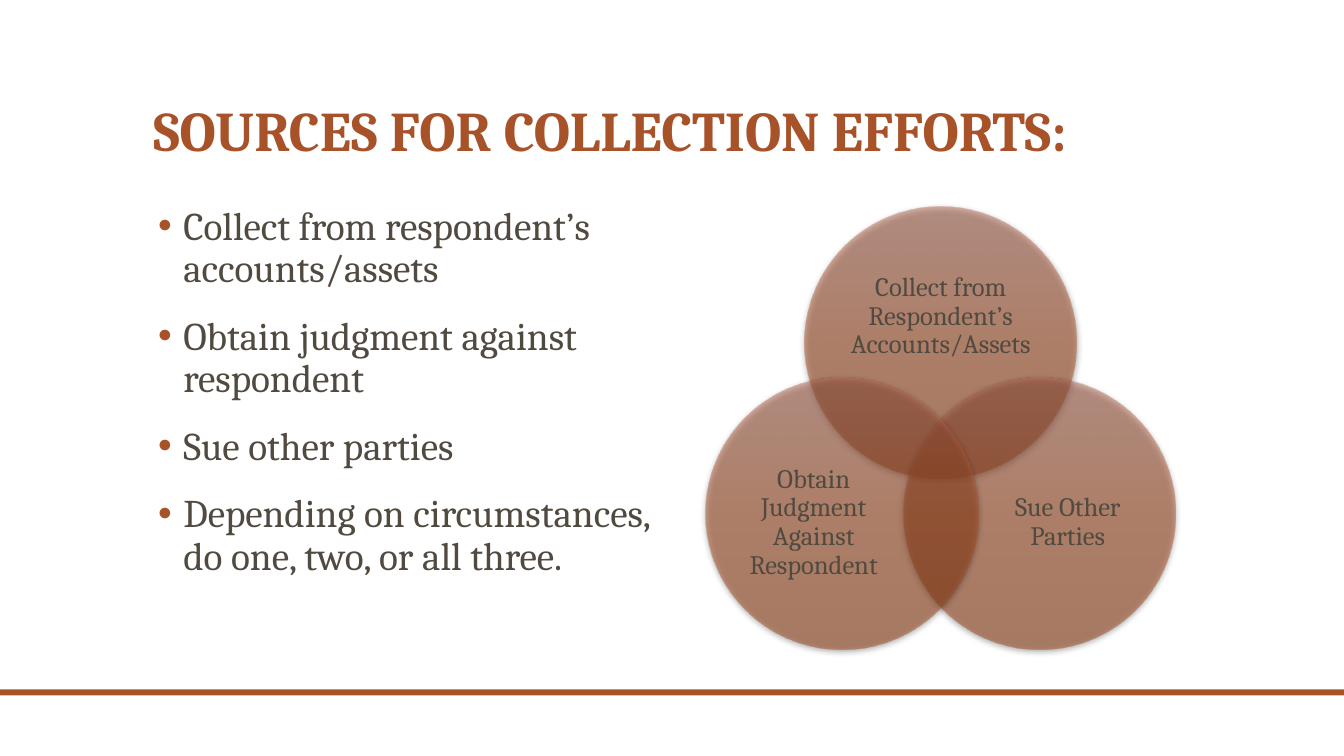
from dataclasses import dataclass
from math import cos, radians, sin

from lxml import etree
from pptx import Presentation
from pptx.dml.color import RGBColor
from pptx.enum.shapes import MSO_SHAPE
from pptx.enum.text import MSO_ANCHOR, MSO_AUTO_SIZE, PP_ALIGN
from pptx.oxml import parse_xml
from pptx.oxml.ns import nsdecls, qn
from pptx.util import Inches, Pt


@dataclass(frozen=True)
class Theme:
    font: str = "Cambria"
    accent: str = "A85229"
    text: str = "514A40"
    gradient: tuple = ((0, "B46952"), (50, "AE5023"), (100, "A14519"))
    title_size: int = 40
    body_size: int = 28
    label_size: int = 19


theme = Theme()


def style(p, size, color, bold=False):
    p.line_spacing = 0.9
    for r in p.runs:
        r.font.name = theme.font
        r.font.size = Pt(size)
        r.font.bold = bold
        r.font.color.rgb = RGBColor.from_string(color)


def glaze(shape):
    """Give a shape a half-transparent vertical gradient and a soft shadow."""
    shape.line.fill.background()
    shape.shadow.inherit = False
    stops = "".join(
        f'<a:gs pos="{pos * 1000}"><a:srgbClr val="{color}"><a:alpha val="50000"/></a:srgbClr></a:gs>'
        for pos, color in theme.gradient)
    spPr = shape._element.spPr
    spPr.find(qn("a:prstGeom")).addnext(parse_xml(
        f'<a:gradFill {nsdecls("a")} rotWithShape="1"><a:gsLst>{stops}</a:gsLst>'
        '<a:lin ang="5400000" scaled="0"/></a:gradFill>'))
    spPr.find(qn("a:effectLst")).append(parse_xml(
        f'<a:outerShdw {nsdecls("a")} blurRad="{Pt(4.5)}" dist="{Pt(1.5)}" dir="5400000" rotWithShape="0">'
        '<a:srgbClr val="000000"><a:alpha val="63000"/></a:srgbClr></a:outerShdw>'))


prs = Presentation()
prs.slide_width, prs.slide_height = Inches(13.33), Inches(7.5)
s = prs.slides.add_slide(prs.slide_layouts[5])

# Rule across the foot of the slide
rule = s.shapes.add_shape(MSO_SHAPE.RECTANGLE, 0, Inches(6.84), prs.slide_width, Inches(0.06))
rule.shadow.inherit = False
rule.fill.solid()
rule.fill.fore_color.rgb = RGBColor.from_string(theme.accent)
rule.line.fill.background()

# Title
title = s.shapes.title
title.left, title.top, title.width, title.height = map(Inches, (1.42, 0.42, 10.5, 1.25))
tf = title.text_frame
tf.text = "SOURCES FOR COLLECTION EFFORTS:"
tf.auto_size = MSO_AUTO_SIZE.NONE
tf.vertical_anchor = MSO_ANCHOR.BOTTOM
tf.paragraphs[0].alignment = PP_ALIGN.LEFT
style(tf.paragraphs[0], theme.title_size, theme.accent, bold=True)

# Bullets
bullets = [
    "Collect from respondent’s accounts/assets",
    "Obtain judgment against respondent",
    "Sue other parties",
    "Depending on circumstances, do one, two, or all three.",
]
tf = s.shapes.add_textbox(Inches(1.42), Inches(2), Inches(5.17), Inches(4.5)).text_frame
tf.word_wrap = True
for i, bullet in enumerate(bullets):
    p = tf.add_paragraph() if i else tf.paragraphs[0]
    p.text = bullet
    pPr = p._p.get_or_add_pPr()
    pPr.set("marL", str(Inches(0.3)))
    pPr.set("indent", str(Inches(-0.25)))
    color = etree.SubElement(pPr, qn("a:buClr"))
    etree.SubElement(color, qn("a:srgbClr"), val=theme.accent)
    etree.SubElement(pPr, qn("a:buFont"), typeface="Arial")
    etree.SubElement(pPr, qn("a:buChar"), char="•")
    p.space_before = Pt(18 if i else 0)
    style(p, theme.body_size, theme.text)

# Venn diagram: circles spaced evenly around a centre
center_x, center_y, orbit, diameter = 9.33, 4.53, 1.13, 2.7
venn = [  # angle, label, label box
    (-90, "Collect from Respondent’s Accounts/Assets", (8.34, 2.53, 1.98, 1.22)),
    (30, "Sue Other Parties", (9.78, 4.44, 1.62, 1.49)),
    (150, "Obtain Judgment Against Respondent", (7.26, 4.44, 1.62, 1.49)),
]
for angle, label, box in venn:
    left = center_x + orbit * cos(radians(angle)) - diameter / 2
    top = center_y + orbit * sin(radians(angle)) - diameter / 2
    glaze(s.shapes.add_shape(MSO_SHAPE.OVAL, Inches(left), Inches(top),
                             Inches(diameter), Inches(diameter)))
    tf = s.shapes.add_textbox(*map(Inches, box)).text_frame
    tf.word_wrap = True
    tf.vertical_anchor = MSO_ANCHOR.MIDDLE
    tf.margin_left = tf.margin_right = tf.margin_top = tf.margin_bottom = 0
    p = tf.paragraphs[0]
    p.text = label
    p.alignment = PP_ALIGN.CENTER
    style(p, theme.label_size, theme.text)

prs.save("out.pptx")
